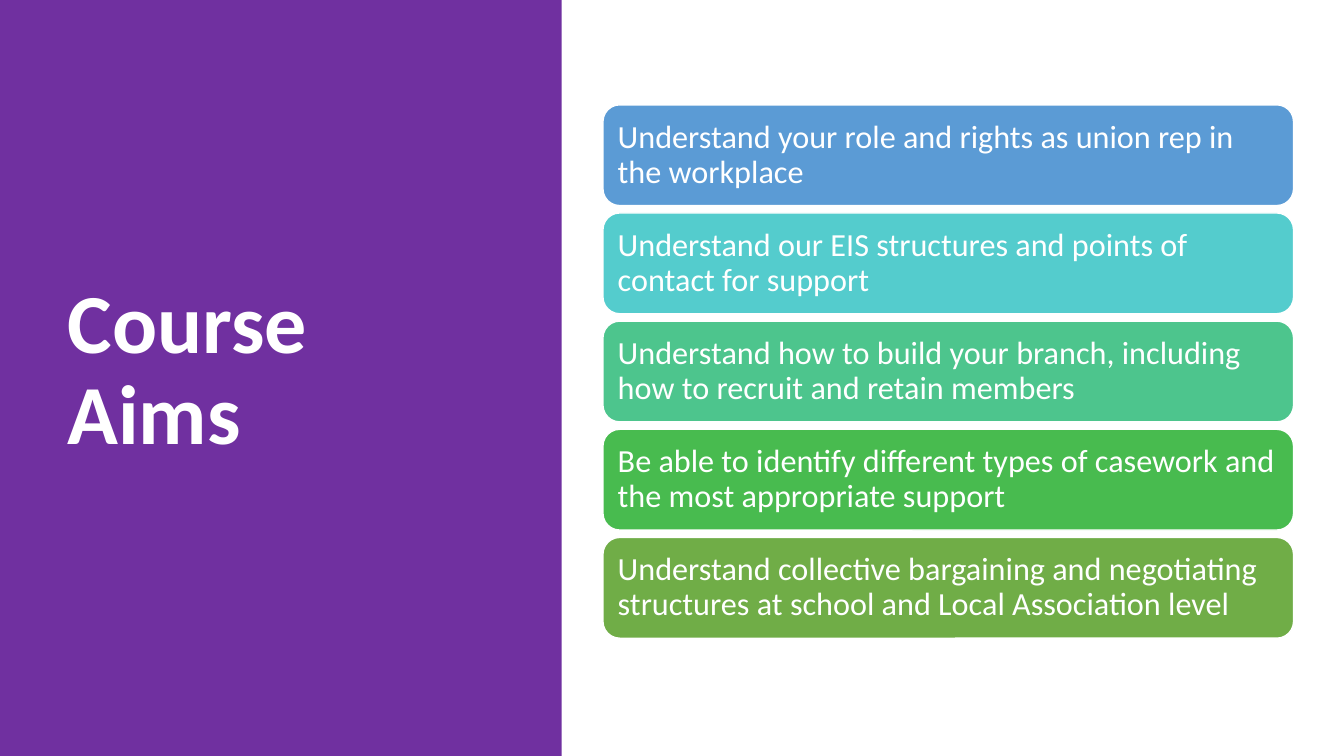
"""Build the Course Aims slide: a purple title panel beside five coloured aims."""
import pptx
import pptx.dml.color
import pptx.enum.shapes
import pptx.enum.text
import pptx.util

Inches = pptx.util.Inches
Pt = pptx.util.Pt
RGBColor = pptx.dml.color.RGBColor
MSO_SHAPE = pptx.enum.shapes.MSO_SHAPE

COLOURS = {
    "panel": "7030A0",
    "white": "FFFFFF",
    "role": "5B9BD5",
    "structures": "54CCCD",
    "branch": "4DC58D",
    "casework": "48BB4F",
    "bargaining": "70AD47",
}
AIMS = {
    "role": "Understand your role and rights as union rep in the workplace",
    "structures": "Understand our EIS structures and points of contact for support",
    "branch": "Understand how to build your branch, including how to recruit and retain members",
    "casework": "Be able to identify different types of casework and the most appropriate support",
    "bargaining": "Understand collective bargaining and negotiating structures at school and Local Association level",
}
AIM_TOP = 1.04
AIM_PITCH = 1.073


def write(shape, text, size, bold=False):
    """Put white, left-aligned, vertically centred text in a shape."""
    frame = shape.text_frame
    frame.text = text
    frame.word_wrap = True
    frame.auto_size = pptx.enum.text.MSO_AUTO_SIZE.NONE
    frame.vertical_anchor = pptx.enum.text.MSO_ANCHOR.MIDDLE
    frame.margin_left = frame.margin_right = Inches(0.1)
    paragraph = frame.paragraphs[0]
    paragraph.alignment = pptx.enum.text.PP_ALIGN.LEFT
    paragraph.line_spacing = 0.9
    font = paragraph.runs[0].font
    font.name = "Calibri"
    font.size = Pt(size)
    font.bold = bold
    font.color.rgb = RGBColor.from_string(COLOURS["white"])


def add_block(kind, left, top, width, height, colour):
    """Add a filled shape without shadow or outline."""
    block = slide.shapes.add_shape(
        kind, Inches(left), Inches(top), Inches(width), Inches(height))
    block.shadow.inherit = False
    block.fill.solid()
    block.fill.fore_color.rgb = RGBColor.from_string(COLOURS[colour])
    block.line.fill.background()
    return block


deck = pptx.Presentation()
deck.slide_width = Inches(13.33)
deck.slide_height = Inches(7.5)
slide = deck.slides.add_slide(deck.slide_layouts[5])

title = slide.shapes.title
title.left, title.top = Inches(0.57), Inches(0.68)
title.width, title.height = Inches(4.16), Inches(6.02)
write(title, "Course Aims", 60, bold=True)

panel = add_block(MSO_SHAPE.RECTANGLE, 0, 0, 5.57, 7.5, "panel")
title._element.addprevious(panel._element)

for row, (topic, aim) in enumerate(AIMS.items()):
    aim_box = add_block(
        MSO_SHAPE.ROUNDED_RECTANGLE, 5.98, AIM_TOP + row * AIM_PITCH, 6.85, 1, topic)
    aim_box.line.color.rgb = RGBColor.from_string(COLOURS["white"])
    aim_box.line.width = Pt(1)
    write(aim_box, aim, 23)

deck.save("out.pptx")
